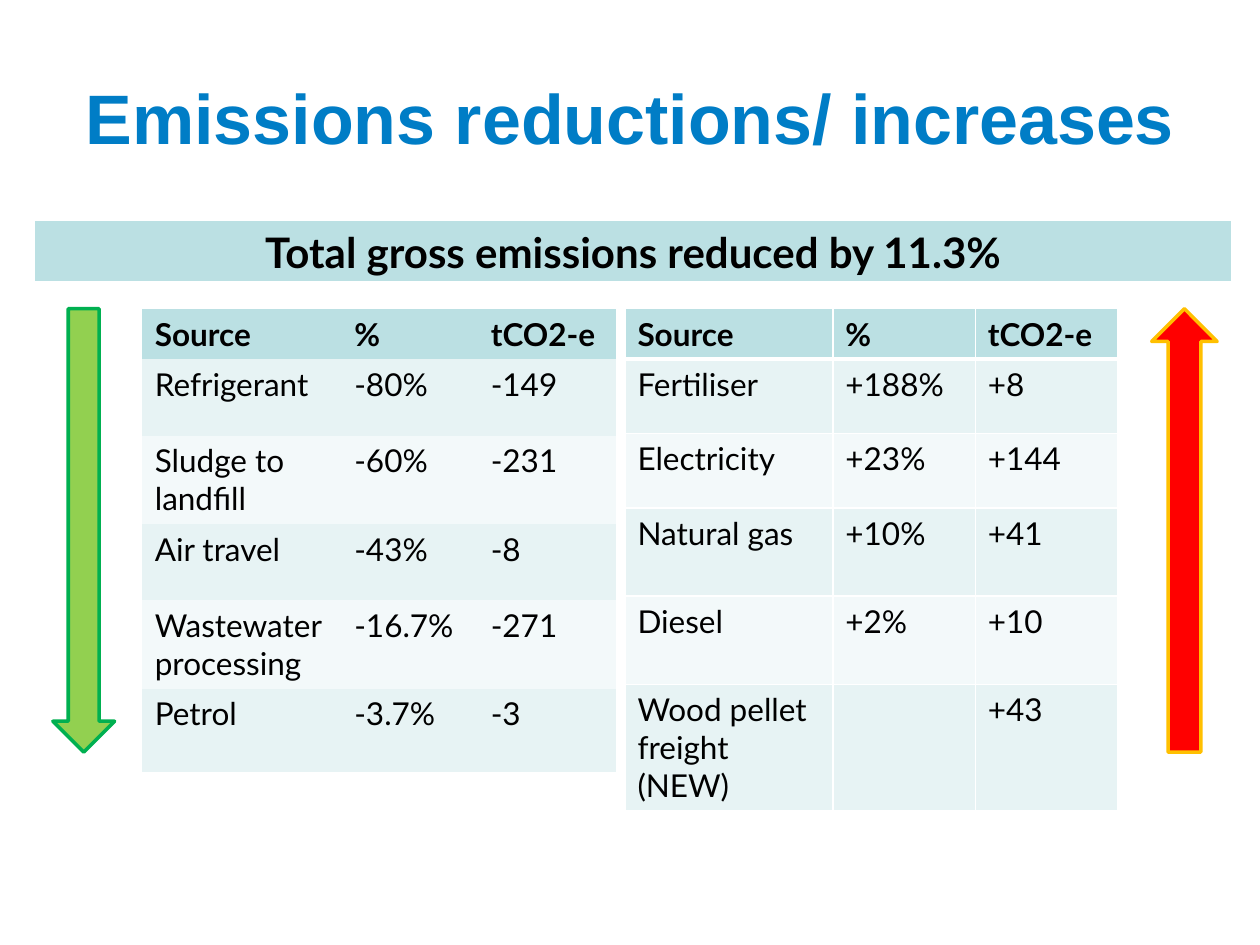
import pptx
import pptx.util
import pptx.dml.color
import pptx.enum.shapes
import pptx.enum.text
from dataclasses import dataclass
from lxml import etree

Pt = pptx.util.Pt
RGB = pptx.dml.color.RGBColor.from_string
ALIGN = pptx.enum.text.PP_ALIGN


@dataclass(frozen=True)
class Theme:
    title_font: str = "Arial"
    body_font: str = "Lato"
    title_size: int = 40
    banner_size: int = 24
    body_size: int = 18
    title: str = "007DC6"
    text: str = "000000"
    header: str = "BBE0E3"
    bands: tuple = ("E7F3F4", "F3F9FA")
    border: str = "FFFFFF"


theme = Theme()
NO_STYLE = "{2D5ABB26-0587-4C30-8999-92F81FD0307C}"


def add_run(paragraph, text, font, size, color, bold):
    run = paragraph.add_run()
    run.text = text
    run.font.name = font
    run.font.size = Pt(size)
    run.font.bold = bold
    run.font.color.rgb = RGB(color)


def add_grid(left, top, widths, heights, rows, size, align, bordered):
    frame = slide.shapes.add_table(len(rows), len(widths), Pt(left), Pt(top),
                                   Pt(sum(widths)), Pt(sum(heights)))
    table = frame.table
    table.first_row = table.horz_banding = False
    table._tbl.tblPr.find(pptx.oxml.ns.qn("a:tableStyleId")).text = NO_STYLE
    for column, width in zip(table.columns, widths):
        column.width = Pt(width)
    for index, (height, texts) in enumerate(zip(heights, rows)):
        table.rows[index].height = Pt(height)
        is_header = index == 0
        for cell, text in zip(table.rows[index].cells, texts):
            if bordered:
                properties = cell._tc.get_or_add_tcPr()
                for side in "LRTB":
                    # The line under the header is heavier
                    heavy = (side == "B" and index == 0) or (side == "T" and index == 1)
                    line = etree.SubElement(properties, pptx.oxml.ns.qn("a:ln" + side),
                                            w=str(Pt(3 if heavy else 1)))
                    fill = etree.SubElement(line, pptx.oxml.ns.qn("a:solidFill"))
                    etree.SubElement(fill, pptx.oxml.ns.qn("a:srgbClr"), val=theme.border)
            cell.fill.solid()
            cell.fill.fore_color.rgb = RGB(theme.header if is_header
                                           else theme.bands[(index - 1) % 2])
            paragraph = cell.text_frame.paragraphs[0]
            paragraph.alignment = align
            if text:
                add_run(paragraph, text, theme.body_font, size, theme.text, is_header)


presentation = pptx.Presentation()
presentation.slide_width, presentation.slide_height = Pt(720), Pt(540)
slide = presentation.slides.add_slide(presentation.slide_layouts[6])

# Title
title = slide.shapes.add_textbox(Pt(36), Pt(21.6), Pt(648), Pt(90))
title.text_frame.word_wrap = True
title.text_frame.vertical_anchor = pptx.enum.text.MSO_ANCHOR.MIDDLE
paragraph = title.text_frame.paragraphs[0]
paragraph.alignment = ALIGN.CENTER
add_run(paragraph, "Emissions reductions/ increases", theme.title_font,
        theme.title_size, theme.title, True)

# Arrows: reductions point down, increases point up
for left, width, rotation, fill, line in (
    (30.2, 35.3, 0, "92D050", "00B050"),
    (658.1, 37.4, 180, "FF0000", "FFC000"),
):
    arrow = slide.shapes.add_shape(pptx.enum.shapes.MSO_SHAPE.DOWN_ARROW,
                                   Pt(left), Pt(176.4), Pt(width), Pt(253.4))
    arrow.shadow.inherit = False
    arrow.rotation = rotation
    arrow.fill.solid()
    arrow.fill.fore_color.rgb = RGB(fill)
    arrow.line.color.rgb = RGB(line)
    arrow.line.width = Pt(2)

# Banner
add_grid(19.4, 126, [684.7], [34.5], [["Total gross emissions reduced by 11.3%"]],
         theme.banner_size, ALIGN.CENTER, True)

# Reductions and increases
header = ["Source", "%", "tCO2-e"]
reductions = [
    header,
    ["Refrigerant", "-80%", "-149"],
    ["Sludge to landfill", "-60%", "-231"],
    ["Air travel", "-43%", "-8"],
    ["Wastewater processing", "-16.7%", "-271"],
    ["Petrol", "-3.7%", "-3"],
]
increases = [
    header,
    ["Fertiliser", "+188%", "+8"],
    ["Electricity", "+23%", "+144"],
    ["Natural gas", "+10%", "+41"],
    ["Diesel", "+2%", "+10"],
    ["Wood pellet freight (NEW)", "", "+43"],
]
add_grid(81.3, 176.4, [114, 78, 78.5], [28.8, 43.7, 50.4, 43.7, 50.4, 47.5],
         reductions, theme.body_size, ALIGN.LEFT, False)
add_grid(357.1, 176.4, [118.8, 81.4, 81.7], [28.8, 42.5, 42.5, 50.4, 50.4, 49.7],
         increases, theme.body_size, ALIGN.LEFT, True)

presentation.save("out.pptx")
